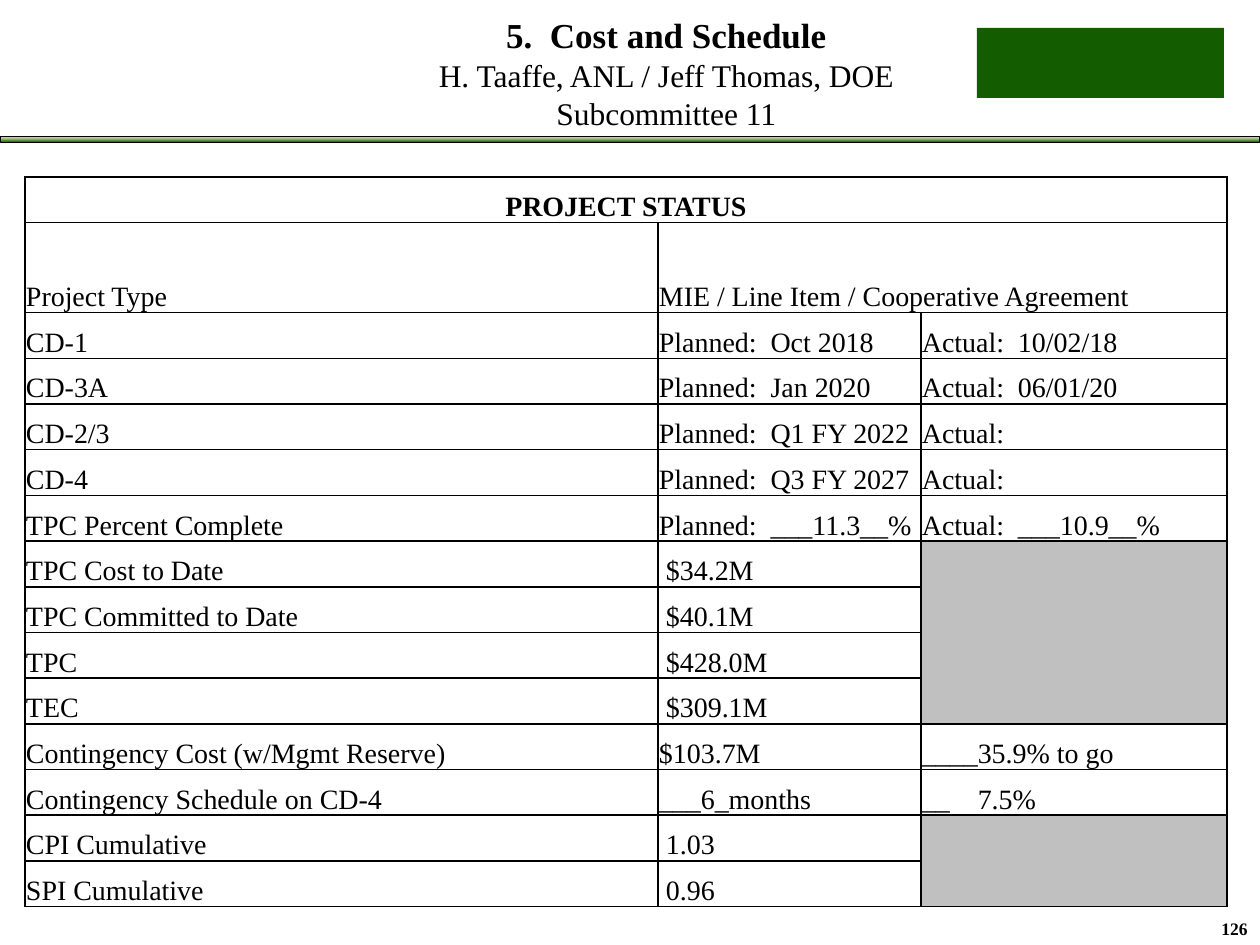
from copy import deepcopy
from lxml.etree import SubElement
from pptx import Presentation
from pptx.dml.color import RGBColor
from pptx.enum.shapes import MSO_SHAPE
from pptx.enum.text import MSO_ANCHOR, PP_ALIGN
from pptx.oxml.ns import qn
from pptx.util import Pt

PX = 914400 // 126
BLACK = RGBColor(0x00, 0x00, 0x00)
WHITE = RGBColor(0xFF, 0xFF, 0xFF)
GREY = RGBColor(0xC0, 0xC0, 0xC0)
GREEN = RGBColor(0x13, 0x5C, 0x00)
BAR_COLORS = [RGBColor(0xDD, 0xEB, 0xCF), RGBColor(0x9C, 0xB8, 0x6E), RGBColor(0x15, 0x6B, 0x13)]


def write(p, text, size=16, bold=False, align=PP_ALIGN.LEFT):
    p.alignment = align
    r = p.add_run()
    r.text = text
    r.font.size = Pt(size)
    r.font.bold = bold
    r.font.color.rgb = BLACK
    r.font.name = "Times New Roman"


def add_box(x, y, w, h, anchor=MSO_ANCHOR.TOP):
    tf = s.shapes.add_textbox(x * PX, y * PX, w * PX, h * PX).text_frame
    tf.word_wrap = True
    tf.vertical_anchor = anchor
    return tf.paragraphs[0]


prs = Presentation()
prs.slide_width = 1260 * PX
prs.slide_height = 945 * PX
s = prs.slides.add_slide(prs.slide_layouts[6])

bar = s.shapes.add_shape(MSO_SHAPE.RECTANGLE, 0, 136 * PX, 1260 * PX, 6 * PX)
bar.shadow.inherit = False
bar.line.color.rgb = BLACK
bar.line.width = Pt(0.5)
bar.fill.gradient()
bar.fill.gradient_angle = 270
stops = bar._element.spPr.find(".//" + qn("a:gsLst"))
stops.insert(1, deepcopy(stops[0]))
for stop, color, position in zip(bar.fill.gradient_stops, BAR_COLORS, (0, 0.5, 1)):
    stop.color.rgb = color
    stop.position = position

block = s.shapes.add_shape(MSO_SHAPE.RECTANGLE, 977 * PX, 28 * PX, 247 * PX, 70 * PX)
block.shadow.inherit = False
block.fill.solid()
block.fill.fore_color.rgb = GREEN
block.line.fill.background()

p = add_box(1208, 912, 52, 33)
write(p, "126", size=10, bold=True, align=PP_ALIGN.RIGHT)

p = add_box(419, 23, 495, 99, anchor=MSO_ANCHOR.MIDDLE)
write(p, "5.  Cost and Schedule", size=20, bold=True, align=PP_ALIGN.CENTER)
p.add_line_break()
write(p, "H. Taaffe, ANL / Jeff Thomas, DOE Subcommittee 11", size=18, align=PP_ALIGN.CENTER)

rows = [
    ("PROJECT STATUS", "", ""),
    ("Project Type", "MIE / Line Item / Cooperative Agreement", ""),
    ("CD-1", "Planned:  Oct 2018", "Actual:  10/02/18"),
    ("CD-3A", "Planned:  Jan 2020", "Actual:  06/01/20"),
    ("CD-2/3", "Planned:  Q1 FY 2022", "Actual:  "),
    ("CD-4", "Planned:  Q3 FY 2027", "Actual:  "),
    ("TPC Percent Complete", "Planned:  ___11.3__%", "Actual:  ___10.9__%"),
    ("TPC Cost to Date", " $34.2M", ""),
    ("TPC Committed to Date", " $40.1M", ""),
    ("TPC", " $428.0M", ""),
    ("TEC", " $309.1M", ""),
    ("Contingency Cost (w/Mgmt Reserve)", "$103.7M", "____35.9% to go"),
    ("Contingency Schedule on CD-4", "___6_months", "__    7.5%"),
    ("CPI Cumulative", " 1.03", ""),
    ("SPI Cumulative", " 0.96", ""),
]
widths = [633, 263, 306]
table_height, type_height = 730, 90
row_height = (table_height - type_height) * PX // (len(rows) - 1)

table = s.shapes.add_table(len(rows), 3, 25 * PX, 177 * PX, sum(widths) * PX, table_height * PX).table
table.first_row = False
table.horz_banding = False
for column, width in zip(table.columns, widths):
    column.width = width * PX

for i, texts in enumerate(rows):
    table.rows[i].height = type_height * PX if i == 1 else row_height
    for j, text in enumerate(texts):
        cell = table.cell(i, j)
        cell.margin_left = cell.margin_right = cell.margin_top = PX
        cell.margin_bottom = 0
        cell.vertical_anchor = MSO_ANCHOR.BOTTOM
        tcPr = cell._tc.get_or_add_tcPr()
        for side in ("a:lnL", "a:lnR", "a:lnT", "a:lnB"):
            ln = SubElement(tcPr, qn(side), w=str(Pt(1)))
            fill = SubElement(ln, qn("a:solidFill"))
            SubElement(fill, qn("a:srgbClr"), val=str(BLACK))
        cell.fill.solid()
        cell.fill.fore_color.rgb = GREY if i > 1 and not text else WHITE
        p = cell.text_frame.paragraphs[0]
        if text:
            write(p, text, bold=i == 0, align=PP_ALIGN.LEFT if i else PP_ALIGN.CENTER)
        else:
            p.font.size = Pt(16)

for top, left, bottom, right in [(0, 0, 0, 2), (1, 1, 1, 2), (7, 2, 10, 2), (13, 2, 14, 2)]:
    table.cell(top, left).merge(table.cell(bottom, right))

prs.save("out.pptx")
